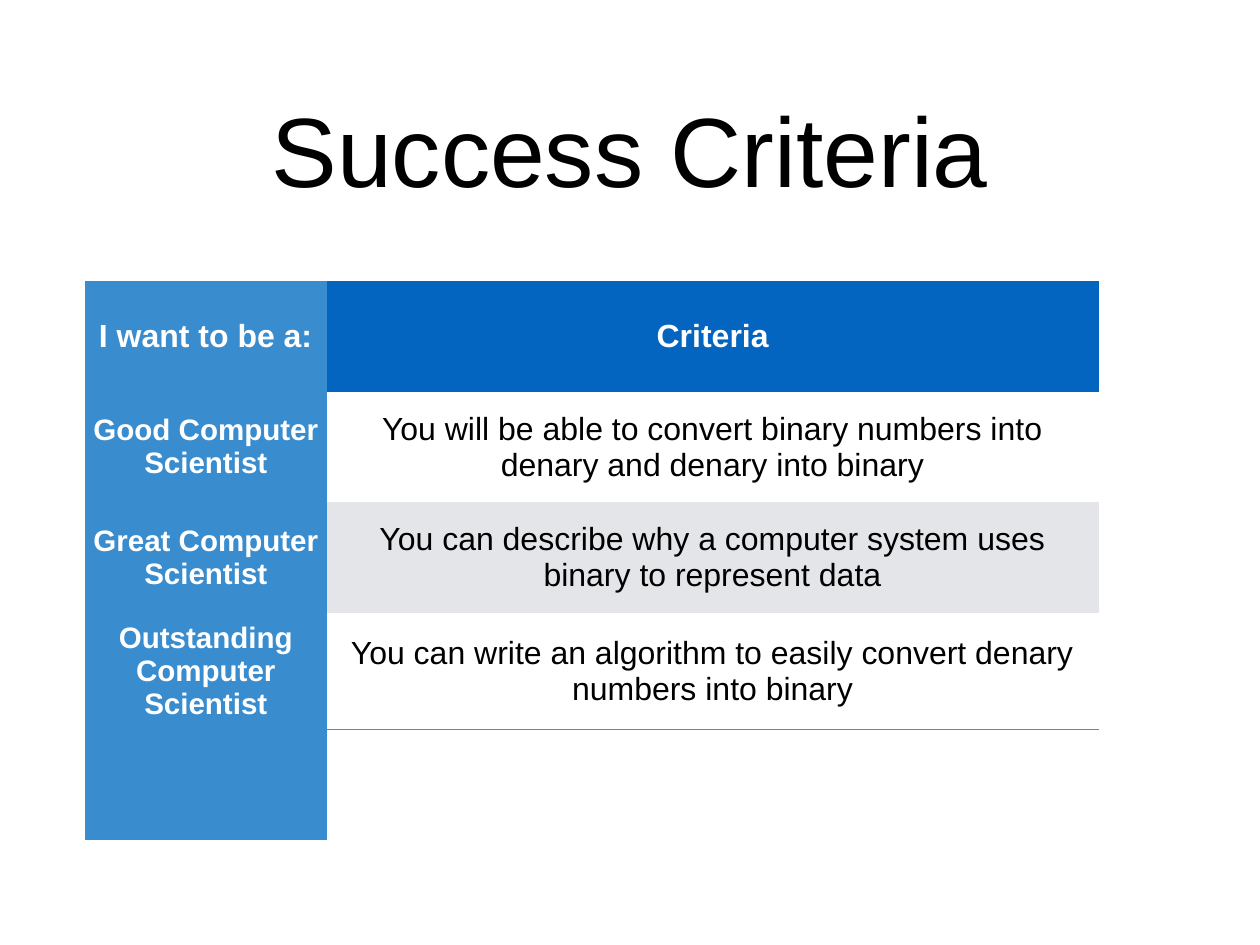
from lxml import etree
from pptx import Presentation
from pptx.dml.color import RGBColor
from pptx.enum.text import MSO_ANCHOR, PP_ALIGN
from pptx.oxml.ns import qn
from pptx.util import Pt

CENTER = PP_ALIGN.CENTER
MIDDLE = MSO_ANCHOR.MIDDLE

BLACK = "000000"
WHITE = "FFFFFF"
HEADER_BLUE = "0365C0"
LEVEL_BLUE = "398CCE"
BAND_GREY = "E3E5E8"
RULE_GREY = "808080"

HEADINGS = ("I want to be a:", "Criteria")
LEVELS = [
    ("Good Computer Scientist",
     "You will be able to convert binary numbers into denary and denary into binary"),
    ("Great Computer Scientist",
     "You can describe why a computer system uses binary to represent data"),
    ("Outstanding Computer Scientist",
     "You can write an algorithm to easily convert denary numbers into binary"),
]


def color(value):
    return RGBColor.from_string(value)


class CriteriaSlide:
    font = "Arial"
    inset = 4

    def __init__(self, slide):
        self.slide = slide

    def set_text(self, paragraph, text, size, ink, bold=False):
        paragraph.text = text
        paragraph.alignment = CENTER
        for run in paragraph.runs:
            run.font.name = self.font
            run.font.size = Pt(size)
            run.font.bold = bold
            run.font.color.rgb = color(ink)

    def pad(self, holder):
        holder.margin_left = holder.margin_right = Pt(self.inset)
        holder.margin_top = holder.margin_bottom = Pt(self.inset)
        holder.vertical_anchor = MIDDLE

    def title(self, text, left, top, width, height, size):
        heading = self.slide.shapes.add_textbox(
            Pt(left), Pt(top), Pt(width), Pt(height)).text_frame
        heading.word_wrap = True
        self.pad(heading)
        self.set_text(heading.paragraphs[0], text, size, BLACK)

    def table(self, rows, left, top, widths, row_height):
        grid = self.slide.shapes.add_table(
            rows, len(widths), Pt(left), Pt(top),
            Pt(sum(widths)), Pt(row_height * rows)).table
        grid.horz_banding = False
        for column, width in zip(grid.columns, widths):
            column.width = Pt(width)
        for row in grid.rows:
            row.height = Pt(row_height)
        return grid

    def cell(self, cell, fill, text="", size=26, ink=WHITE, bold=True):
        cell.fill.solid()
        cell.fill.fore_color.rgb = color(fill)
        self.pad(cell)
        if text:
            self.set_text(cell.text_frame.paragraphs[0], text, size, ink, bold)

    def borders(self, cell, top=None):
        properties = cell._tc.get_or_add_tcPr()
        for position, side in enumerate(("lnL", "lnR", "lnT", "lnB")):
            line = etree.Element(qn(f"a:{side}"))
            if side == "lnT" and top:
                line.set("w", str(Pt(1)))
                paint = etree.SubElement(line, qn("a:solidFill"))
                etree.SubElement(paint, qn("a:srgbClr"), val=top)
            else:
                line.set("w", "0")
                etree.SubElement(line, qn("a:noFill"))
            properties.insert(position, line)


def main():
    deck = Presentation()
    deck.slide_width, deck.slide_height = Pt(1024), Pt(768)
    page = CriteriaSlide(deck.slides.add_slide(deck.slide_layouts[6]))

    page.title("Success Criteria", 75, 35, 874, 170, 80)

    last = len(LEVELS) + 1
    criteria = page.table(last + 1, 69, 228.3, (196.5, 627.5), 90)
    page.cell(criteria.cell(0, 0), LEVEL_BLUE, HEADINGS[0])
    page.cell(criteria.cell(0, 1), HEADER_BLUE, HEADINGS[1])
    for row, (level, criterion) in enumerate(LEVELS, start=1):
        band = WHITE if row % 2 else BAND_GREY
        page.cell(criteria.cell(row, 0), LEVEL_BLUE, level, size=24)
        page.cell(criteria.cell(row, 1), band, criterion, ink=BLACK, bold=False)
    page.cell(criteria.cell(last, 0), LEVEL_BLUE)
    page.cell(criteria.cell(last, 1), WHITE)

    for row in range(last + 1):
        page.borders(criteria.cell(row, 0))
        page.borders(criteria.cell(row, 1), RULE_GREY if row == last else None)

    deck.save("out.pptx")


if __name__ == "__main__":
    main()
